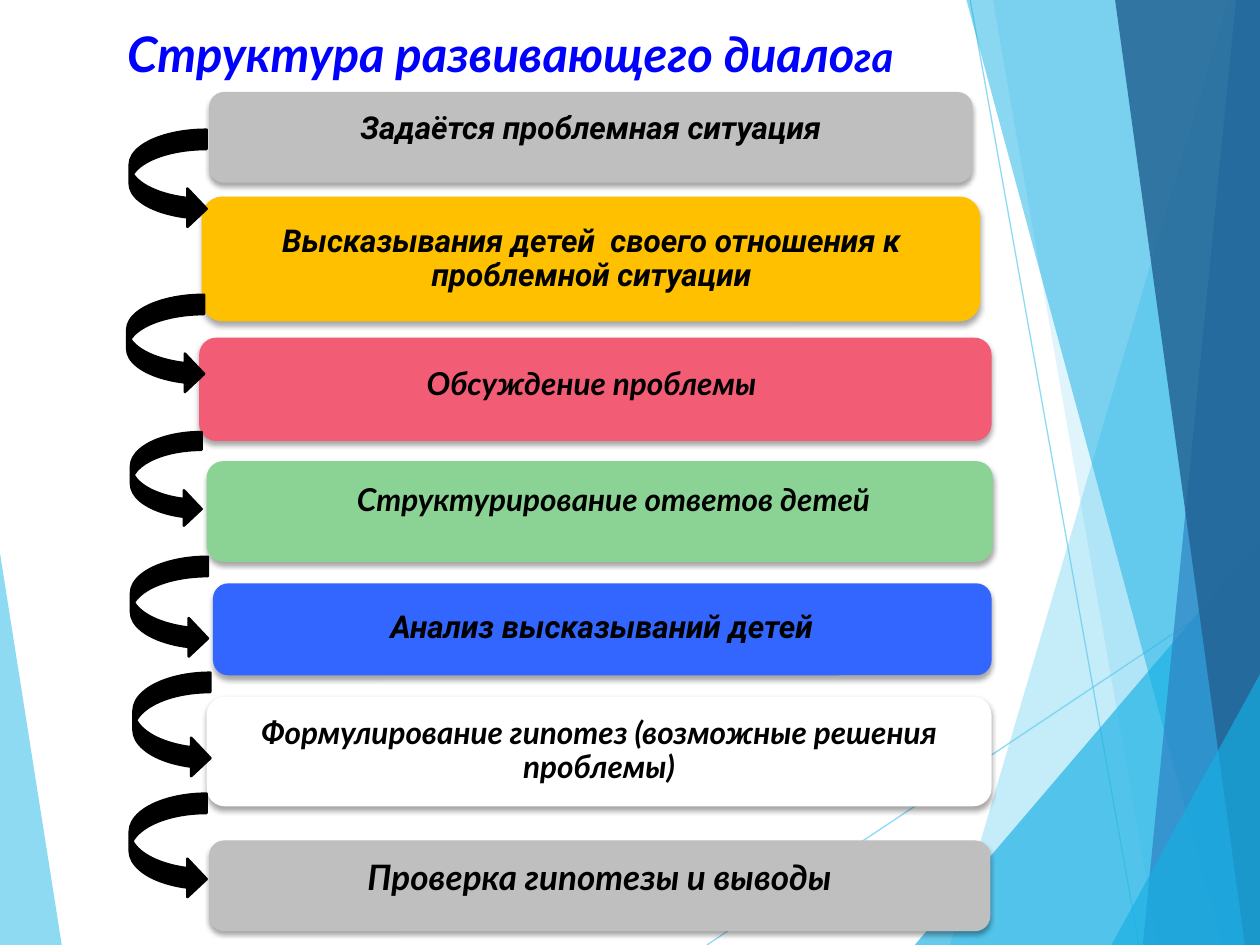
from lxml import etree
from pptx import Presentation
from pptx.dml.color import RGBColor
from pptx.enum.shapes import MSO_CONNECTOR, MSO_SHAPE
from pptx.enum.text import MSO_ANCHOR, MSO_AUTO_SIZE, PP_ALIGN
from pptx.oxml.ns import qn
from pptx.util import Inches, Pt

ROUNDED = MSO_SHAPE.ROUNDED_RECTANGLE
CURVED_ARROW = MSO_SHAPE.CURVED_RIGHT_ARROW
STRAIGHT = MSO_CONNECTOR.STRAIGHT
LEFT, CENTER = PP_ALIGN.LEFT, PP_ALIGN.CENTER
TOP, MIDDLE = MSO_ANCHOR.TOP, MSO_ANCHOR.MIDDLE
NO_AUTOFIT = MSO_AUTO_SIZE.NONE

# The slide is a grid of square cells
COLUMNS, ROWS = 10, 7.5
CELL = Inches(1)

BLACK = RGBColor(0x00, 0x00, 0x00)
WHITE = RGBColor(0xFF, 0xFF, 0xFF)
TITLE_BLUE = RGBColor(0x00, 0x00, 0xFF)
GREY = RGBColor(0xBF, 0xBF, 0xBF)
AMBER = RGBColor(0xFF, 0xC0, 0x00)
ROSE = RGBColor(0xF2, 0x5C, 0x75)
GREEN = RGBColor(0x8A, 0xD3, 0x94)
BLUE = RGBColor(0x33, 0x66, 0xFF)
SKY = RGBColor(0x5F, 0xCB, 0xEF)
CYAN = RGBColor(0x17, 0xB0, 0xE4)
STEEL = RGBColor(0x2E, 0x83, 0xC3)
NAVY = RGBColor(0x22, 0x62, 0x92)

# Background facets: corner points, colour, opacity in percent
FACETS = [
    ([(0, 4.39), (0.49, ROWS), (0, ROWS)], SKY, 70),
    ([(9.75, 0), (7.54, ROWS), (COLUMNS, ROWS), (COLUMNS, 0)], SKY, 36),
    ([(7.88, 0), (9.19, ROWS), (COLUMNS, ROWS), (COLUMNS, 0)], SKY, 20),
    ([(7.26, ROWS), (COLUMNS, 4.29), (COLUMNS, ROWS)], CYAN, 66),
    ([(7.67, 0), (9.7, ROWS), (COLUMNS, ROWS), (COLUMNS, 0)], CYAN, 50),
    ([(9.81, 0), (9.07, ROWS), (COLUMNS, ROWS), (COLUMNS, 0)], STEEL, 70),
    ([(8.85, 0), (9.88, ROWS), (COLUMNS, ROWS), (COLUMNS, 0)], NAVY, 82),
    ([(8.82, ROWS), (COLUMNS, 5.35), (COLUMNS, ROWS)], CYAN, 66),
]
RAYS = [((5.61, ROWS), (COLUMNS, 4.57)), ((7.7, 0), (9.04, ROWS))]

# Steps: bar box, bar colour, label box, label, font, size
STEPS = [
    ((1.66, 0.73, 6.06, 0.72), GREY, (1.75, 0.76, 5.88, 0.54),
     "Задаётся проблемная ситуация", "Roboto", 18),
    ((1.6, 1.56, 6.18, 0.99), AMBER, (1.66, 1.61, 6.07, 0.9),
     "Высказывания детей  своего отношения к проблемной ситуации", "Roboto", 18),
    ((1.58, 2.68, 6.29, 0.82), ROSE, (1.64, 2.68, 6.11, 0.76),
     "Обсуждение проблемы", "Lato", 18),
    ((1.64, 3.66, 6.24, 0.8), GREEN, (2.5, 3.78, 4.74, 0.4),
     "Структурирование ответов детей", "Lato", 18),
    ((1.69, 4.63, 6.18, 0.73), BLUE, (1.74, 4.66, 6.07, 0.66),
     "Анализ высказываний детей", "Roboto", 18),
    ((1.64, 5.53, 6.23, 0.87), WHITE, (1.73, 5.57, 6.05, 0.79),
     "Формулирование гипотез (возможные решения проблемы)", "Lato", 18),
    ((1.66, 6.67, 6.2, 0.72), GREY, (1.75, 6.71, 6.02, 0.54),
     "Проверка гипотезы и выводы", "Lato", 20),
]
ARROWS = [
    (1.03, 1.03, 0.61, 0.78), (1.01, 2.34, 0.61, 0.78), (1.04, 3.43, 0.56, 0.75),
    (1.04, 4.42, 0.61, 0.8), (1.06, 5.34, 0.61, 0.83), (1.03, 6.3, 0.61, 0.83),
]


def cells(values):
    return [round(value * CELL) for value in values]


def set_opacity(shape, percent):
    color = next(shape.element.spPr.iter(qn("a:srgbClr")))
    etree.SubElement(color, qn("a:alpha"), val=str(percent * 1000))


def add_soft_shadow(shape):
    effects = shape.element.spPr.find(qn("a:effectLst"))
    shadow = etree.SubElement(effects, qn("a:outerShdw"), blurRad=str(Pt(3)),
                              dist=str(Pt(2)), dir="5400000", rotWithShape="0")
    color = etree.SubElement(shadow, qn("a:srgbClr"), val=str(BLACK))
    etree.SubElement(color, qn("a:alpha"), val="35000")


def fill_plain(shape, color):
    shape.shadow.inherit = False
    shape.fill.solid()
    shape.fill.fore_color.rgb = color
    shape.line.fill.background()


def add_facet(slide, points, color, opacity):
    corners = [cells(point) for point in points]
    builder = slide.shapes.build_freeform(*corners[0])
    builder.add_line_segments(corners[1:], close=True)
    facet = builder.convert_to_shape()
    fill_plain(facet, color)
    set_opacity(facet, opacity)


def add_ray(slide, start, end):
    ray = slide.shapes.add_connector(STRAIGHT, *cells(start + end))
    ray.line.color.rgb = SKY
    ray.line.width = Pt(0.75)
    set_opacity(ray, 70)
    etree.SubElement(ray.element.spPr, qn("a:effectLst"))


def add_shape(slide, kind, box, color):
    shape = slide.shapes.add_shape(kind, *cells(box))
    fill_plain(shape, color)
    return shape


def write(paragraph, text, font, size, color=BLACK, align=CENTER, spacing=0.9):
    paragraph.alignment = align
    paragraph.line_spacing = spacing
    run = paragraph.add_run()
    run.text = text
    run.font.name = font
    run.font.size = Pt(size)
    run.font.bold = run.font.italic = True
    run.font.color.rgb = color


def set_frame(frame, anchor, wrap, margin):
    frame.auto_size = NO_AUTOFIT
    frame.word_wrap = wrap
    frame.vertical_anchor = anchor
    frame.margin_left = frame.margin_right = Inches(margin)
    frame.margin_top = frame.margin_bottom = Inches(min(margin, 0.07))


def add_title(slide):
    title = slide.shapes.title
    title.left, title.top, title.width, title.height = cells((0.91, 0.12, 6.95, 0.57))
    set_frame(title.text_frame, TOP, False, 0.1)
    for text, size in (("Структура развивающего диало", 28), ("га", 24)):
        write(title.text_frame.paragraphs[0], text, font="Lato", size=size,
              color=TITLE_BLUE, align=LEFT, spacing=1)
    # Bring the title in front of the background
    title.element.getparent().append(title.element)


def add_step(slide, bar_box, color, label_box, text, font, size):
    add_soft_shadow(add_shape(slide, ROUNDED, bar_box, color))
    label = slide.shapes.add_textbox(*cells(label_box))
    set_frame(label.text_frame, MIDDLE, True, 0.07)
    write(label.text_frame.paragraphs[0], text, font=font, size=size)


def add_arrow(slide, box):
    arrow = add_shape(slide, CURVED_ARROW, box, BLACK)
    arrow.line.color.rgb = BLACK
    arrow.line.width = Pt(1.5)


def main():
    presentation = Presentation()
    presentation.slide_width, presentation.slide_height = cells((COLUMNS, ROWS))
    slide = presentation.slides.add_slide(presentation.slide_layouts[5])

    # Background
    for ray in RAYS:
        add_ray(slide, *ray)
    for facet in FACETS:
        add_facet(slide, *facet)

    # Title, steps and the arrows between them
    add_title(slide)
    for step in STEPS:
        add_step(slide, *step)
    for box in ARROWS:
        add_arrow(slide, box)

    presentation.save("out.pptx")


if __name__ == "__main__":
    main()
